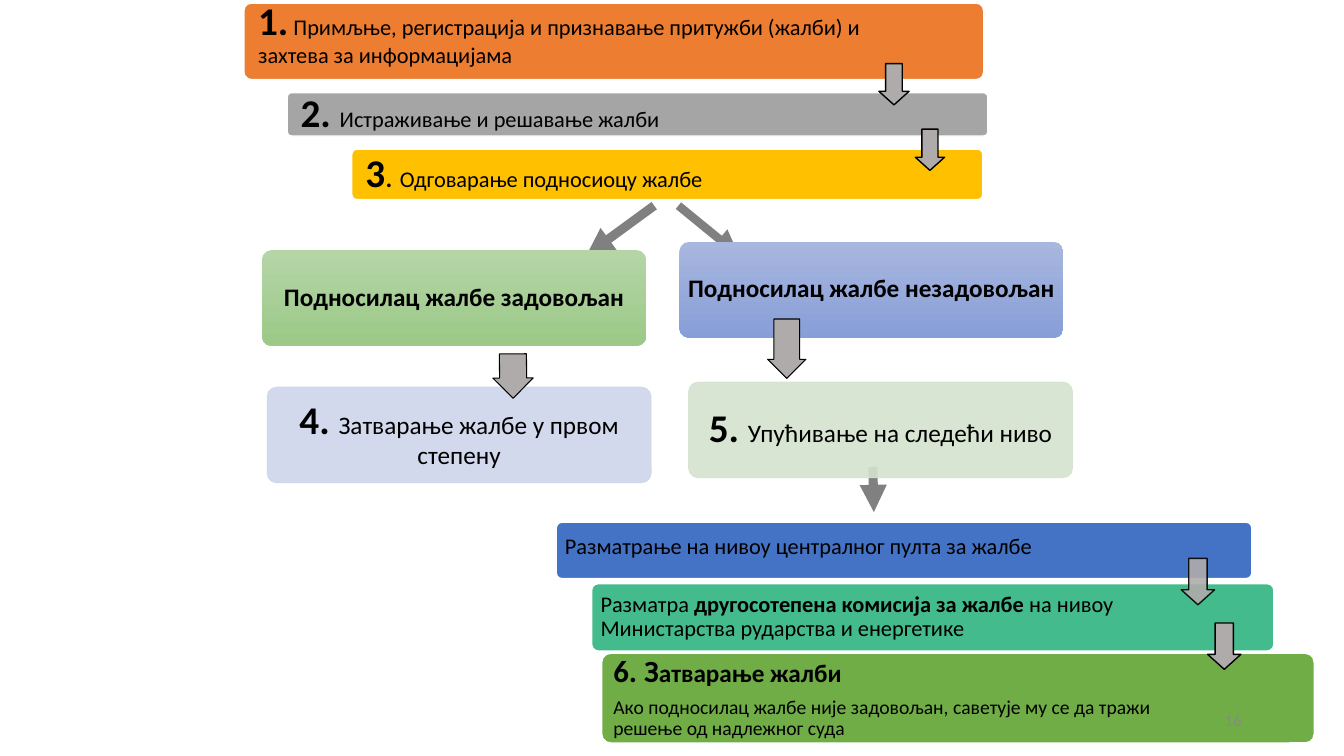
from dataclasses import dataclass
from typing import Optional

from pptx import Presentation
from pptx import util as u
from pptx.dml import color, fill
from pptx.enum import shapes, text
from pptx.oxml import ns, xmlchemy

HUE = {
    "orange": "ED7D31", "gray": "A5A5A5", "gold": "FFC000",
    "blue": "4472C4", "teal": "43BB8D", "green": "70AD47",
    "lilac": "CFD5EA", "mint": "D5E3CF", "arrow": "AFABAB",
    "link": "808080", "white": "FFFFFF", "black": "000000",
    "sky top": "A8B7DF", "sky low": "889ED7",
    "leaf top": "B5D5A7", "leaf low": "9CC987", "number": "898989",
}
FONT = "Calibri"
WIDE, TALL = 274.3, 68.4
LEFT, MID = text.PP_ALIGN.LEFT, text.PP_ALIGN.CENTER
DOWN, RIGHT = shapes.MSO_SHAPE.DOWN_ARROW, shapes.MSO_SHAPE.RIGHT_ARROW


@dataclass(frozen=True)
class Run:
    words: str
    size: float
    bold: bool = False
    hue: str = "black"


@dataclass(frozen=True)
class Box:
    x: float
    y: float
    w: float
    h: float
    hues: tuple[str, ...]
    inset: tuple[float, float, float, float]
    paras: tuple[tuple[Run, ...], ...]
    align: text.PP_ALIGN = LEFT
    edge: Optional[str] = "white"
    weight: float = 1
    alpha: int = 100


@dataclass(frozen=True)
class Arrow:
    x: float
    y: float
    w: float
    h: float
    kind: shapes.MSO_SHAPE = DOWN
    turn: float = 0
    alpha: int = 100


@dataclass(frozen=True)
class Link:
    x1: float
    y1: float
    x2: float
    y2: float
    weight: float = 6.5


def card(x: float, y: float, hues: tuple[str, ...], pad: float, *runs: Run) -> Box:
    plain = len(hues) == 1
    return Box(x, y, WIDE, TALL, hues, (pad,) * 4, (runs,), MID,
               hues[0] if plain else None, 0.5, 90 if plain else 100)


ITEMS = [
    Box(174.2, 2.2, 528.5, 54.7, ("orange",), (8.6, 0, 54.5, 8.6),
        ((Run("1.", 28, True),
          Run(" Примљње, регистрација и признавање притужби (жалби) и захтева за информацијама", 16)),)),
    Box(205.2, 66.2, 500.4, 31, ("gray",), (8.6, 8.6, 86, 8.6),
        ((Run("2. ", 28, True), Run("Истраживање и решавање жалби", 16)),)),
    Box(251.3, 106.6, 450.7, 36, ("gold",), (8.6, 8.6, 78, 8.6),
        ((Run("3", 28, True), Run(". ", 22), Run("Одговарање подносиоцу жалбе", 16)),)),
    Arrow(627.8, 45.4, 21.6, 29.5),
    Arrow(653.8, 92.2, 20.9, 29.5),
    Link(484.6, 146.9, 527.8, 182.2, 6),
    Link(467.3, 146.9, 419, 182.2),
    Box(397.4, 373, 496.8, 40.3, ("blue",), (5, 0, 57.5, 5),
        ((Run("Разматрање на нивоу централног пулта за жалбе", 16),),)),
    Box(422.6, 416.9, 487.4, 48.2, ("teal",), (5, 5, 83.5, 5),
        ((Run("Разматра ", 16), Run("другосотепена комисија за жалбе ", 16, True),
          Run("на нивоу Министарства рударства и енергетике", 16)),)),
    Box(429.8, 466.6, 509, 64.1, ("green",), (6.5, 6.5, 88.5, 6.5),
        ((Run("6. З", 22, True), Run("атварање жалби", 18, True)),
         (Run("Ако подносилац жалбе није задовољан, саветује му се да тражи решење од надлежног суда", 14),))),
    Arrow(843.8, 398.9, 23.8, 33.1, alpha=90),
    Arrow(862.6, 445, 23.8, 33.1),
    Link(623.5, 333.4, 624.2, 365.8),
    card(485.3, 172.8, ("sky top", "sky low"), 2.2,
         Run("Подносилац жалбе незадовољан", 18, True)),
    Arrow(540.7, 235.4, 42.5, 27.4, RIGHT, 90),
    card(190.8, 276.5, ("lilac",), 2.9,
         Run("4. ", 28, True), Run("Затварање жалбе у првом степену", 18)),
    card(187.2, 178.6, ("leaf top", "leaf low"), 2.2,
         Run("Подносилац жалбе задовољан", 18, True)),
    Arrow(350.6, 254.2, 31.7, 28.8, RIGHT, 89.7),
    card(491.8, 272.9, ("mint",), 2.9,
         Run("5. ", 28, True), Run("Упућивање на следећи ниво", 18)),
]


def rgb(hue: str) -> color.RGBColor:
    return color.RGBColor.from_string(HUE[hue])


def add(node: xmlchemy.BaseOxmlElement, tag: str, **attrs: str) -> None:
    child = node.makeelement(ns.qn(tag), attrs)
    node.append(child)


def paint(area: fill.FillFormat, hue: str, alpha: int = 100) -> None:
    area.solid()
    area.fore_color.rgb = rgb(hue)
    if alpha < 100:
        node = area._xPr.find(".//" + ns.qn("a:srgbClr"))
        add(node, "a:alpha", val=str(alpha * 1000))


def write(frame, paras, align, inset) -> None:
    frame.word_wrap = True
    frame.vertical_anchor = text.MSO_ANCHOR.MIDDLE
    (frame.margin_left, frame.margin_top,
     frame.margin_right, frame.margin_bottom) = map(u.Pt, inset)
    for i, runs in enumerate(paras):
        para = frame.paragraphs[0] if i == 0 else frame.add_paragraph()
        para.alignment = align
        para.line_spacing = 0.9
        para.space_after = u.Pt(6 if i < len(paras) - 1 else 0)
        for item in runs:
            run = para.add_run()
            run.text = item.words
            run.font.name = FONT
            run.font.size = u.Pt(item.size)
            run.font.bold = item.bold
            run.font.color.rgb = rgb(item.hue)


def draw_box(slide, box: Box) -> None:
    shape = slide.shapes.add_shape(shapes.MSO_SHAPE.ROUNDED_RECTANGLE,
                                   *map(u.Pt, (box.x, box.y, box.w, box.h)))
    shape.shadow.inherit = False
    shape.adjustments[0] = 0.1
    if len(box.hues) == 1:
        paint(shape.fill, box.hues[0], box.alpha)
    else:
        shape.fill.gradient()
        shape.fill.gradient_angle = 270
        for stop, hue in zip(shape.fill.gradient_stops, box.hues):
            stop.color.rgb = rgb(hue)
    if box.edge is None:
        shape.line.fill.background()
    else:
        shape.line.width = u.Pt(box.weight)
        paint(shape.line.fill, box.edge, box.alpha)
    write(shape.text_frame, box.paras, box.align, box.inset)


def draw_arrow(slide, arrow: Arrow) -> None:
    shape = slide.shapes.add_shape(
        arrow.kind, *map(u.Pt, (arrow.x, arrow.y, arrow.w, arrow.h)))
    shape.shadow.inherit = False
    shape.rotation = arrow.turn
    down = arrow.kind == DOWN
    shape.adjustments[0], shape.adjustments[1] = (0.55, 0.45) if down else (0.67, 0.5)
    paint(shape.fill, "arrow", arrow.alpha)
    shape.line.width = u.Pt(1 if down else 0.75)
    paint(shape.line.fill, "black", arrow.alpha)


def draw_link(slide, link: Link) -> None:
    line = slide.shapes.add_connector(
        shapes.MSO_CONNECTOR.STRAIGHT,
        *map(u.Pt, (link.x1, link.y1, link.x2, link.y2)))
    line.line.width = u.Pt(link.weight)
    paint(line.line.fill, "link")
    add(line.line._get_or_add_ln(), "a:tailEnd", type="triangle")
    add(line._element.spPr, "a:effectLst")


def main() -> None:
    deck = Presentation()
    deck.slide_width, deck.slide_height = u.Pt(960), u.Pt(540)
    slide = deck.slides.add_slide(deck.slide_layouts[6])
    draw = {Box: draw_box, Arrow: draw_arrow, Link: draw_link}
    for item in ITEMS:
        draw[type(item)](slide, item)
    page = slide.shapes.add_textbox(*map(u.Pt, (678, 500.5, 216, 28.75)))
    write(page.text_frame, ((Run("16", 12, hue="number"),),),
          text.PP_ALIGN.RIGHT, (7.2, 3.6, 7.2, 3.6))
    deck.save("out.pptx")


if __name__ == "__main__":
    main()
